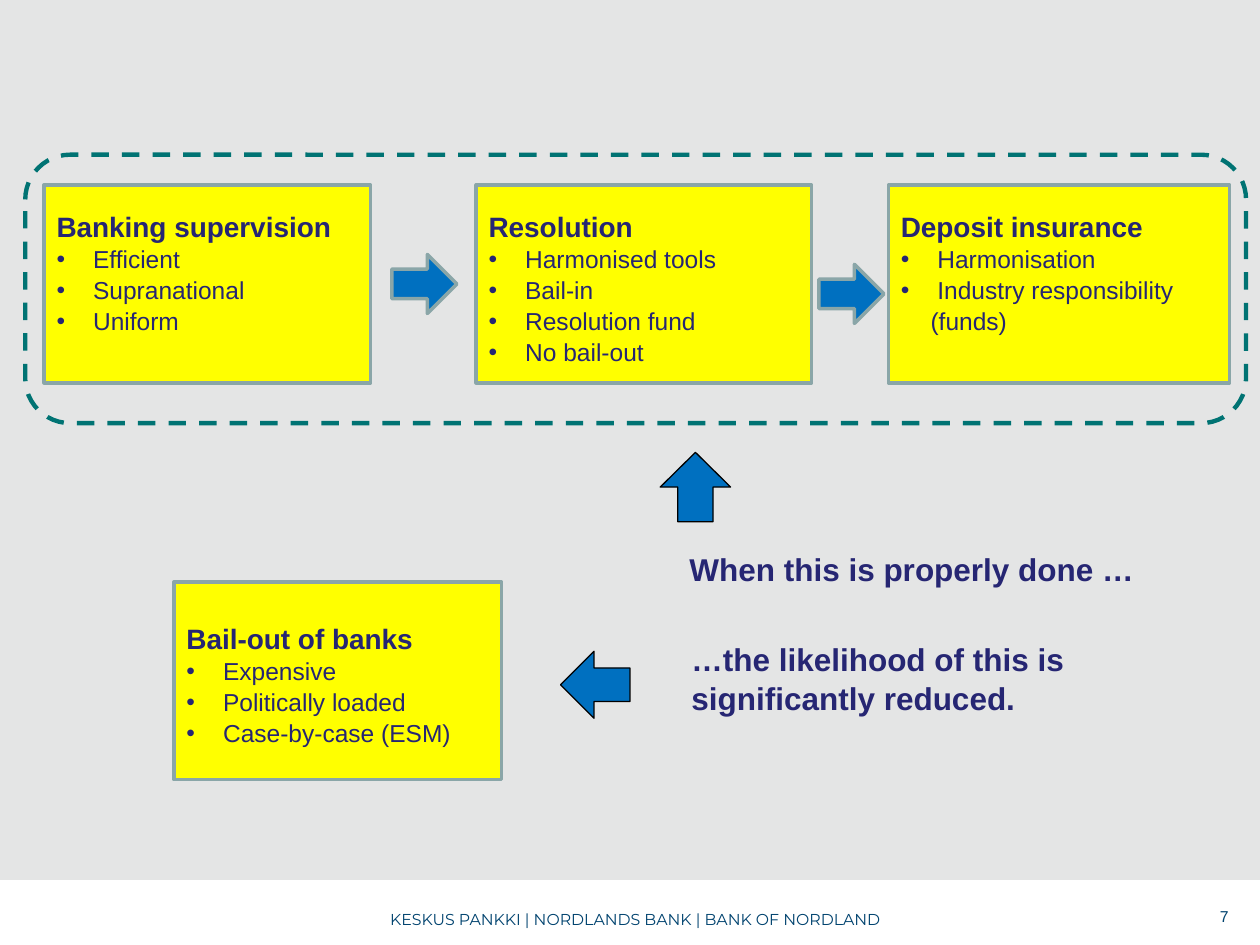
from lxml import etree
from pptx import Presentation
from pptx.dml.color import RGBColor
from pptx.enum.dml import MSO_LINE
from pptx.enum.shapes import MSO_SHAPE
from pptx.enum.text import MSO_ANCHOR, PP_ALIGN
from pptx.oxml.ns import qn
from pptx.util import Cm, Pt

RECT = MSO_SHAPE.RECTANGLE
ROUNDED = MSO_SHAPE.ROUNDED_RECTANGLE
RIGHT_ARROW = MSO_SHAPE.RIGHT_ARROW
LEFT_ARROW = MSO_SHAPE.LEFT_ARROW
UP_ARROW = MSO_SHAPE.UP_ARROW
DASH = MSO_LINE.DASH
TOP = MSO_ANCHOR.TOP
LEFT, CENTER, RIGHT = PP_ALIGN.LEFT, PP_ALIGN.CENTER, PP_ALIGN.RIGHT

PANEL = RGBColor(0xE4, 0xE5, 0xE5)
YELLOW = RGBColor(0xFF, 0xFF, 0x00)
GREY_GREEN = RGBColor(0x8A, 0xA6, 0xA8)
NAVY = RGBColor(0x26, 0x26, 0x73)
BLUE = RGBColor(0x00, 0x70, 0xC0)
TEAL = RGBColor(0x00, 0x73, 0x73)
FOOTER_BLUE = RGBColor(0x00, 0x43, 0x6F)
BLACK = RGBColor(0x00, 0x00, 0x00)

LINE_SPACING = 1.05
BULLET_INDENT = Cm(0.6)
BOX_HEIGHT = 3.99
ROW_TOP = 3.73


def add_shape(slide, kind, at, fill, line, width):
    """Add a preset shape; at is left, top, width, height in cm."""
    sp = slide.shapes.add_shape(kind, *map(Cm, at))
    sp.shadow.inherit = False
    if fill is None:
        sp.fill.background()
    else:
        sp.fill.solid()
        sp.fill.fore_color.rgb = fill
    sp.line.color.rgb = line
    sp.line.width = Pt(width)
    return sp


def format_paragraph(p, size, color=NAVY, bold=False, align=LEFT, font="Arial"):
    p.alignment = align
    for r in p.runs:
        r.font.name = font
        r.font.size = Pt(size)
        r.font.bold = bold
        r.font.color.rgb = color


def add_bullet(p):
    pPr = p._p.get_or_add_pPr()
    pPr.set("marL", str(BULLET_INDENT))
    pPr.set("indent", str(-BULLET_INDENT))
    etree.SubElement(pPr, qn("a:buFont")).set("typeface", "Arial")
    etree.SubElement(pPr, qn("a:buChar")).set("char", "•")


def add_topic_box(slide, left, top, width, inset, title, items):
    """Add a yellow box with a bold title and bulleted items."""
    sp = add_shape(slide, RECT, (left, top, width, BOX_HEIGHT), YELLOW, GREY_GREEN, 2)
    tf = sp.text_frame
    tf.word_wrap = True
    tf.vertical_anchor = TOP
    tf.margin_top = Cm(inset)
    p = tf.paragraphs[0]
    p.text = title
    p.line_spacing = LINE_SPACING
    format_paragraph(p, 16, bold=True)
    for item in items:
        p = tf.add_paragraph()
        p.text = f" {item}"
        p.line_spacing = LINE_SPACING
        format_paragraph(p, 14)
        add_bullet(p)


def add_text(slide, at, text, size, **style):
    tf = slide.shapes.add_textbox(*map(Cm, at)).text_frame
    tf.word_wrap = True
    tf.text = text
    p = tf.paragraphs[0]
    p.line_spacing = LINE_SPACING
    format_paragraph(p, size, **style)


def main():
    prs = Presentation()
    prs.slide_width, prs.slide_height = Cm(25.4), Cm(19.05)
    slide = prs.slides.add_slide(prs.slide_layouts[6])

    add_shape(slide, RECT, (0, 0, 25.4, 17.73), PANEL, PANEL, 0.75)
    add_text(slide, (1.47, 18.19, 22.66, 0.64),
             "KESKUS PANKKI | NORDLANDS BANK | BANK OF NORDLAND", 9,
             color=FOOTER_BLUE, align=CENTER, font="Montserrat")

    pillars = [
        (0.89, 6.58, "Banking supervision", ["Efficient", "Supranational", "Uniform"]),
        (9.6, 6.76, "Resolution",
         ["Harmonised tools", "Bail-in", "Resolution fund", "No bail-out"]),
        (17.91, 6.88, "Deposit insurance",
         ["Harmonisation", "Industry responsibility (funds)"]),
    ]
    for left, width, title, items in pillars:
        add_topic_box(slide, left, ROW_TOP, width, 0.46, title, items)
    for left, top in [(7.9, 5.13), (16.51, 5.33)]:
        add_shape(slide, RIGHT_ARROW, (left, top, 1.31, 1.19), BLUE, GREY_GREEN, 2)

    add_topic_box(slide, 3.51, 11.73, 6.6, 0.76, "Bail-out of banks",
                  ["Expensive", "Politically loaded", "Case-by-case (ESM)"])

    frame = add_shape(slide, ROUNDED, (0.51, 3.12, 24.61, 5.41), None, TEAL, 2.5)
    frame.line.dash_style = DASH

    add_shape(slide, UP_ARROW, (13.31, 9.12, 1.42, 1.4), BLUE, BLACK, 0.75)
    add_text(slide, (13.31, 10.92, 9.8, 1.02), "When this is properly done …", 18,
             bold=True, align=RIGHT)
    add_shape(slide, LEFT_ARROW, (11.3, 13.13, 1.4, 1.35), BLUE, BLACK, 0.75)
    add_text(slide, (13.69, 12.73, 8.41, 1.8),
             "…the likelihood of this is significantly reduced.", 18, bold=True)
    add_text(slide, (22.3, 18.14, 2.72, 0.81), "7", 9, color=FOOTER_BLUE, align=RIGHT)

    prs.save("out.pptx")


if __name__ == "__main__":
    main()
